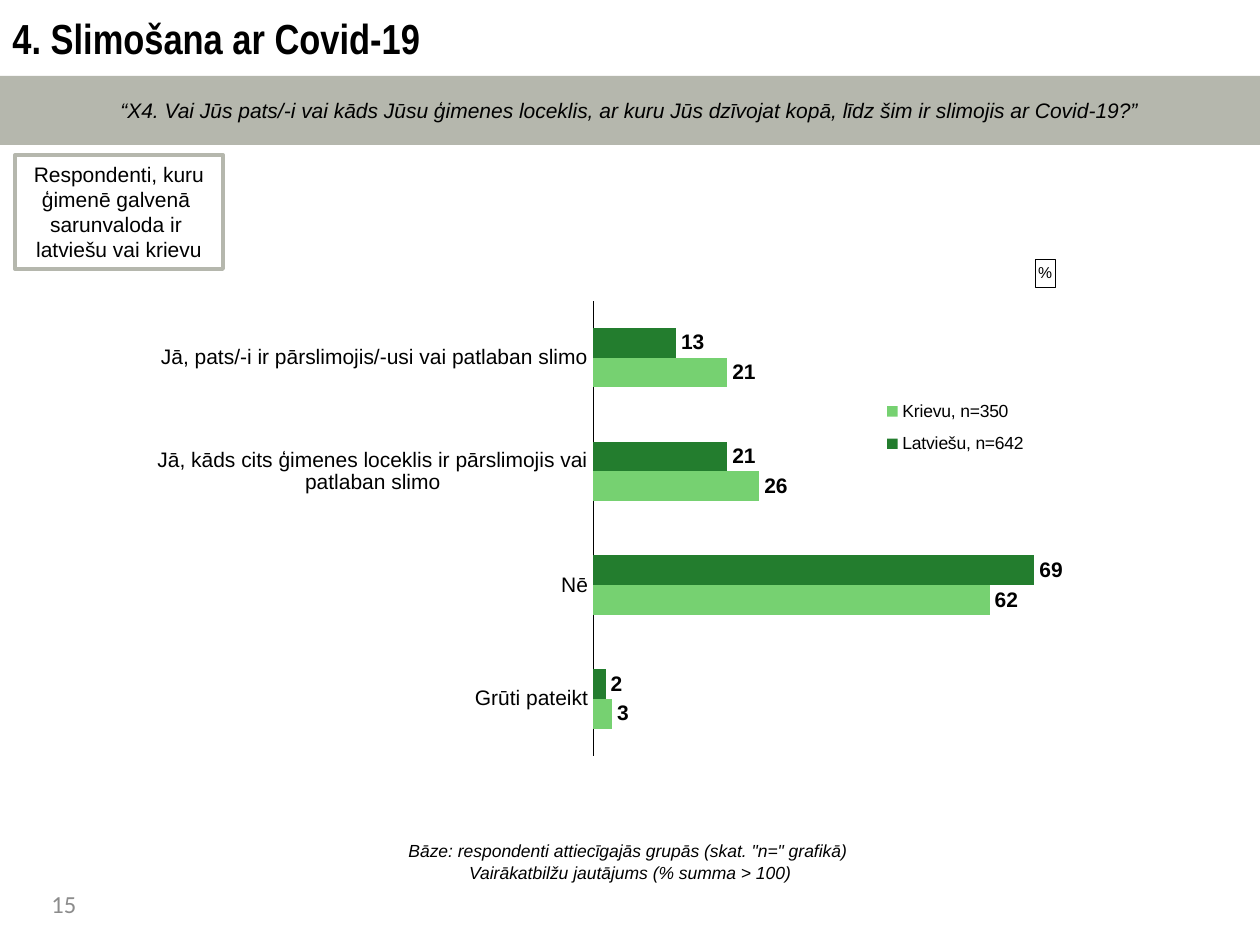
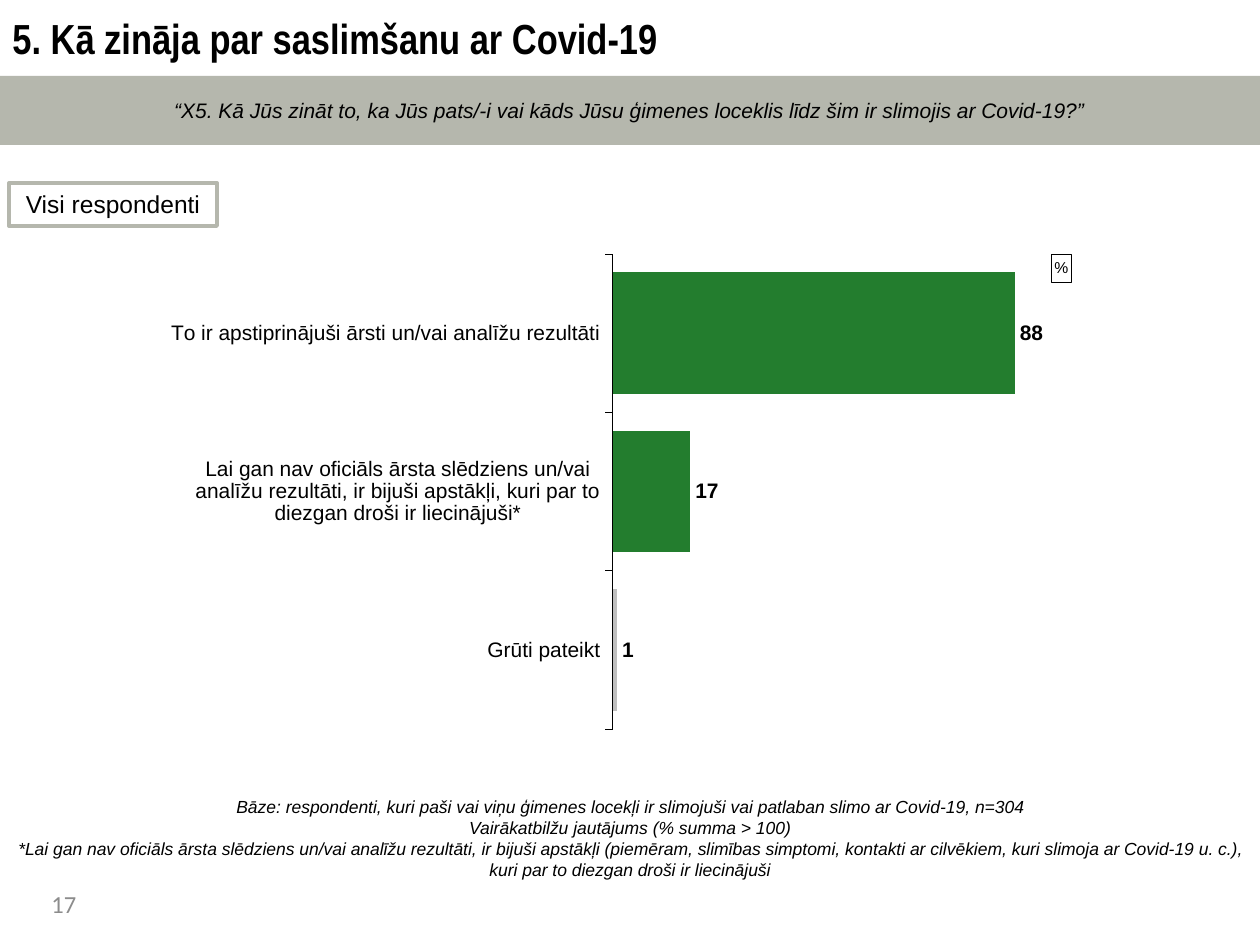
from lxml import etree
from pptx import Presentation
from pptx.chart.data import CategoryChartData
from pptx.dml.color import RGBColor
from pptx.enum.chart import XL_CHART_TYPE, XL_LABEL_POSITION, XL_LEGEND_POSITION, XL_TICK_MARK
from pptx.enum.shapes import MSO_SHAPE
from pptx.enum.text import MSO_ANCHOR, PP_ALIGN
from pptx.oxml.ns import qn
from pptx.util import Pt

PX = 914400 / 126
WIDTH, HEIGHT = 1260, 945
COLORS = {
    "text": "000000",
    "band": "B5B7AD",
    "number": "8C8C8C",
    "dark_green": "237D2E",
    "light_green": "76D171",
    "grey": "BFBFBF",
}
FONT, TITLE_FONT, NUMBER_FONT = "Arial", "Arial Narrow", "Calibri"
BAR = XL_CHART_TYPE.BAR_CLUSTERED
OUTSIDE_END = XL_LABEL_POSITION.OUTSIDE_END
LEGEND_TOP = XL_LEGEND_POSITION.TOP
NO_TICK, TICK_OUT = XL_TICK_MARK.NONE, XL_TICK_MARK.OUTSIDE
RECTANGLE = MSO_SHAPE.RECTANGLE
TOP, MIDDLE = MSO_ANCHOR.TOP, MSO_ANCHOR.MIDDLE
LEFT, CENTER = PP_ALIGN.LEFT, PP_ALIGN.CENTER


def emu(*lengths):
    return [round(length * PX) for length in lengths]


def rgb(name):
    return RGBColor.from_string(COLORS[name])


def set_layout(parent, index, **fractions):
    """Place a chart part by fractions of the chart area."""
    for old in parent.findall(qn("c:layout")):
        parent.remove(old)
    layout = etree.Element(qn("c:layout"))
    manual = etree.SubElement(layout, qn("c:manualLayout"))
    if index == 0:
        etree.SubElement(manual, qn("c:layoutTarget")).set("val", "inner")
    for mode in ("xMode", "yMode"):
        etree.SubElement(manual, qn("c:" + mode)).set("val", "edge")
    for key, value in fractions.items():
        etree.SubElement(manual, qn("c:" + key)).set("val", str(value))
    parent.insert(index, layout)


class SurveyDeck:
    def __init__(self):
        self.prs = Presentation()
        self.prs.slide_width, self.prs.slide_height = emu(WIDTH, HEIGHT)
        self.slide = None

    def style(self, font, size, color="text", face=FONT, bold=False, italic=False):
        font.name, font.size = face, Pt(size)
        font.bold, font.italic = bold, italic
        font.color.rgb = rgb(color)

    def add_lines(self, frame, lines, size, align=CENTER, **look):
        for i, line in enumerate(lines):
            paragraph = frame.paragraphs[0] if i == 0 else frame.add_paragraph()
            paragraph.alignment = align
            run = paragraph.add_run()
            run.text = line
            self.style(run.font, size, **look)

    def fill_frame(self, frame, lines, size, anchor=MIDDLE, **look):
        frame.word_wrap = True
        frame.vertical_anchor = anchor
        self.add_lines(frame, lines, size, **look)

    def text(self, box, lines, size, **look):
        frame = self.slide.shapes.add_textbox(*emu(*box)).text_frame
        self.fill_frame(frame, lines, size, **look)

    def rectangle(self, box, lines, size, fill=None, line=None, **look):
        shape = self.slide.shapes.add_shape(RECTANGLE, *emu(*box))
        shape.shadow.inherit = False
        if fill:
            shape.fill.solid()
            shape.fill.fore_color.rgb = rgb(fill)
        else:
            shape.fill.background()
        if line:
            shape.line.color.rgb = rgb(line)
            shape.line.width = Pt(2.25)
        else:
            shape.line.fill.background()
        self.fill_frame(shape.text_frame, lines, size, **look)

    def question_slide(self, number, title, question):
        """Start a slide with its page number, title and question band."""
        self.slide = self.prs.slides.add_slide(self.prs.slide_layouts[6])
        self.text((39, 883, 134, 50), [number], 14, align=LEFT, anchor=TOP,
                  color="number", face=NUMBER_FONT)
        self.text((0, 0, WIDTH, 76), [title], 24, align=LEFT, face=TITLE_FONT, bold=True)
        self.rectangle((0, 76, WIDTH, 69), [question], 12, fill="band", italic=True)

    def respondents(self, box, lines, size):
        self.rectangle(box, lines, size, line="band", anchor=TOP)

    def base_note(self, top, height, lines):
        self.text((0, top, WIDTH, height), lines, 10, italic=True)

    def bar_chart(self, box, answers, groups, plot_area, unit_at, maximum, gap, tick, axis_width):
        data = CategoryChartData(number_format="0")
        data.categories = answers
        for name, values, _ in groups:
            data.add_series(name, values)
        chart = self.slide.shapes.add_chart(BAR, *emu(*box), data).chart
        self.style(chart.font, 9)
        chart.has_legend = False
        plot = chart.plots[0]
        plot.gap_width, plot.overlap = gap, 0
        plot.vary_by_categories = False
        set_layout(chart.element.find(".//" + qn("c:plotArea")), 0,
                   **dict(zip("xywh", plot_area)))

        # Unit box
        title = chart.chart_title
        self.add_lines(title.text_frame, ["%"], 9)
        title.format.line.color.rgb = rgb("text")
        title.format.line.width = Pt(0.25)
        element = chart.element.find(".//" + qn("c:title"))
        set_layout(element, 1, **dict(zip("xy", unit_at)))
        element.find(qn("c:overlay")).set("val", "1")

        # Axes
        answer_axis, share_axis = chart.category_axis, chart.value_axis
        answer_axis.reverse_order = True
        answer_axis.major_tick_mark = tick
        answer_axis.minor_tick_mark = NO_TICK
        answer_axis.format.line.color.rgb = rgb("text")
        answer_axis.format.line.width = Pt(axis_width)
        self.style(answer_axis.tick_labels.font, 12)
        share_axis.minimum_scale, share_axis.maximum_scale = 0, maximum
        share_axis.has_major_gridlines = False
        share_axis.visible = False

        # Bars and their values
        for series, (_, _, color) in zip(plot.series, groups):
            series.format.fill.solid()
            series.format.fill.fore_color.rgb = rgb(color)
            series.invert_if_negative = False
            labels = series.data_labels
            labels.show_value = True
            labels.position = OUTSIDE_END
            labels.number_format, labels.number_format_is_linked = "0", False
            self.style(labels.font, 12, bold=True)
        return chart

    def legend(self, chart, **place):
        chart.has_legend = True
        chart.legend.position = LEGEND_TOP
        chart.legend.include_in_layout = False
        self.style(chart.legend.font, 10)
        set_layout(chart.element.find(".//" + qn("c:legend")), 1, **place)


def main():
    deck = SurveyDeck()

    # Having had Covid-19, by language group
    deck.question_slide(
        "15", "4. Slimošana ar Covid-19",
        "“X4. Vai Jūs pats/-i vai kāds Jūsu ģimenes loceklis, ar kuru Jūs dzīvojat kopā, "
        "līdz šim ir slimojis ar Covid-19?”")
    deck.base_note(832, 59, ['Bāze: respondenti attiecīgajās grupās (skat. "n=" grafikā) ',
                             "Vairākatbilžu jautājums (% summa > 100)"])
    illness = deck.bar_chart(
        (132, 244, 941, 517),
        ["Jā, pats/-i ir pārslimojis/-usi vai patlaban slimo",
         "Jā, kāds cits ģimenes loceklis ir pārslimojis vai patlaban slimo",
         "Nē", "Grūti pateikt"],
        [("Latviešu, n=642", (13, 21, 69, 2), "dark_green"),
         ("Krievu, n=350", (21, 26, 62, 3), "light_green")],
        plot_area=(0.49, 0.11, 0.51, 0.88), unit_at=(0.96, 0.03),
        maximum=75, gap=182, tick=NO_TICK, axis_width=0.5)
    deck.legend(illness, x=0.79, y=0.28, w=0.17, h=0.15)
    deck.respondents((15, 155, 208, 114),
                     ["Respondenti, kuru ģimenē galvenā ", "sarunvaloda ir ",
                      "latviešu vai krievu"], 12)

    # How the illness was known
    deck.question_slide(
        "17", "5. Kā zināja par saslimšanu ar Covid-19",
        "“X5. Kā Jūs zināt to, ka Jūs pats/-i vai kāds Jūsu ģimenes loceklis "
        "līdz šim ir slimojis ar Covid-19?”")
    deck.base_note(783, 111, [
        "Bāze: respondenti, kuri paši vai viņu ģimenes locekļi ir slimojuši "
        "vai patlaban slimo ar Covid-19, n=304",
        "Vairākatbilžu jautājums (% summa > 100)",
        "*Lai gan nav oficiāls ārsta slēdziens un/vai analīžu rezultāti, ir bijuši apstākļi "
        "(piemēram, slimības simptomi, kontakti ar cilvēkiem, kuri slimoja ar Covid-19 u. c.), "
        "kuri par to diezgan droši ir liecinājuši"])
    evidence = deck.bar_chart(
        (171, 244, 917, 495),
        ["To ir apstiprinājuši ārsti un/vai analīžu rezultāti",
         "Lai gan nav oficiāls ārsta slēdziens un/vai analīžu rezultāti, ir bijuši apstākļi, "
         "kuri par to diezgan droši ir liecinājuši*",
         "Grūti pateikt"],
        [("Visi respondenti", (88, 17, 1), "dark_green")],
        plot_area=(0.48, 0.02, 0.5, 0.96), unit_at=(0.96, 0.02),
        maximum=100, gap=30, tick=TICK_OUT, axis_width=0.25)
    undecided = evidence.plots[0].series[0].points[2].format.fill
    undecided.solid()
    undecided.fore_color.rgb = rgb("grey")
    deck.respondents((9, 183, 208, 43), ["Visi respondenti"], 14)

    deck.prs.save("out.pptx")


if __name__ == "__main__":
    main()
